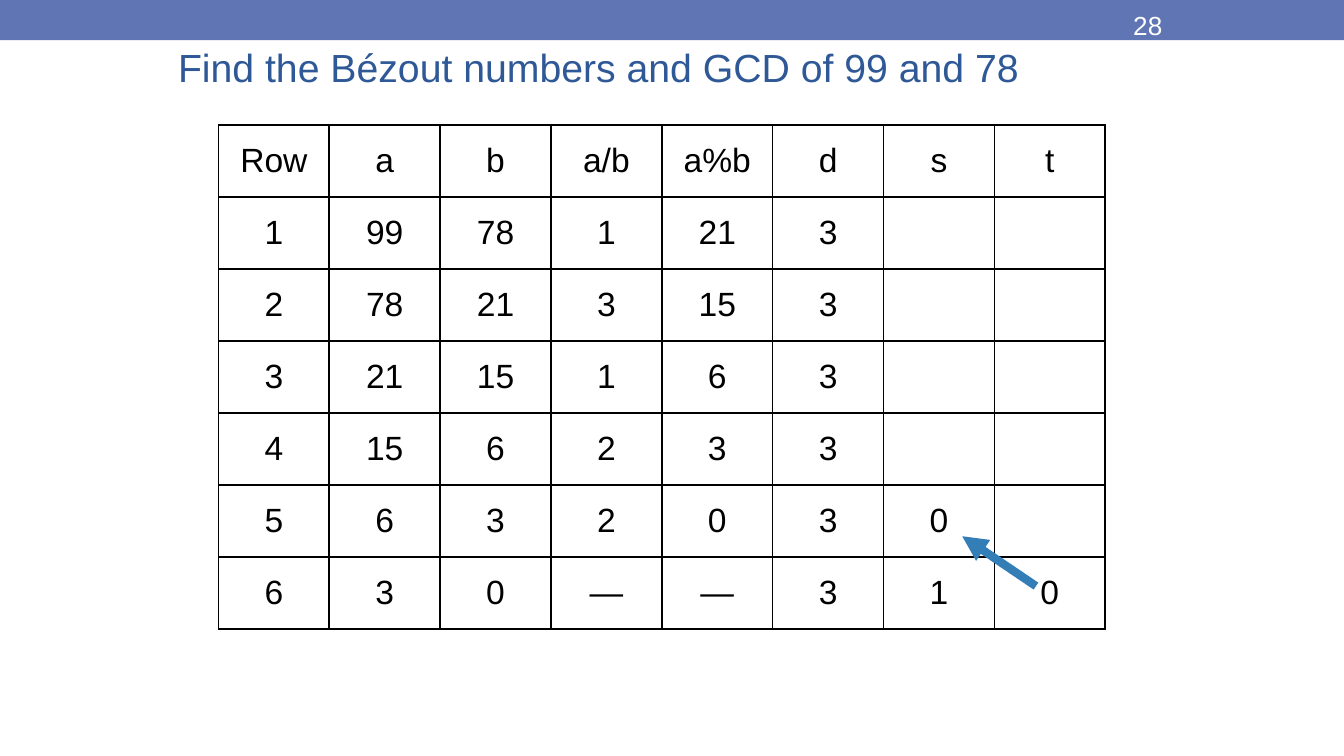
from dataclasses import dataclass

from pptx import Presentation
from pptx import util as u
from pptx.dml.color import RGBColor
from pptx.enum import shapes, text
from pptx.oxml import parse_xml
from pptx.oxml.ns import nsdecls

Pt = u.Pt


@dataclass(frozen=True)
class Theme:
    font: str = "Arial"
    band: str = "6076B4"
    heading: str = "2F5897"
    ink: str = "000000"
    light: str = "FFFFFF"
    arrow: str = "347EB8"
    title_size: float = 21
    table_size: float = 18
    number_size: float = 14


def write(frame, words, *, size, color, font, align=text.PP_ALIGN.LEFT):
    para = frame.paragraphs[0]
    para.alignment = align
    span = para.add_run()
    span.text = words
    span.font.name = font
    span.font.size = Pt(size)
    span.font.color.rgb = RGBColor.from_string(color)


class PageBuilder:
    def __init__(self, page, theme):
        self.page = page
        self.theme = theme

    def band(self, left, top, width, height):
        box = self.page.shapes.add_shape(
            shapes.MSO_SHAPE.RECTANGLE, Pt(left), Pt(top), Pt(width), Pt(height))
        box.shadow.inherit = False
        box.fill.solid()
        box.fill.fore_color.rgb = RGBColor.from_string(self.theme.band)
        box.line.fill.background()

    def label(self, words, left, top, width, height, *, size, color,
              inset, anchor=text.MSO_ANCHOR.TOP):
        """Add a text box; inset is (side, top and bottom)."""
        box = self.page.shapes.add_textbox(Pt(left), Pt(top), Pt(width), Pt(height))
        frame = box.text_frame
        frame.word_wrap = True
        frame.vertical_anchor = anchor
        frame.margin_left = frame.margin_right = Pt(inset[0])
        frame.margin_top = frame.margin_bottom = Pt(inset[1])
        write(frame, words, size=size, color=color, font=self.theme.font)

    def border(self, cell):
        """Draw a thin line on all four sides; call before setting the fill."""
        properties = cell._tc.get_or_add_tcPr()
        for side in ("lnL", "lnR", "lnT", "lnB"):
            properties.append(parse_xml(
                f'<a:{side} {nsdecls("a")} w="{Pt(1)}"><a:solidFill>'
                f'<a:srgbClr val="{self.theme.ink}"/></a:solidFill></a:{side}>'))

    def table(self, rows, left, top, column_width, row_height):
        count = len(rows[0])
        table = self.page.shapes.add_table(
            len(rows), count, Pt(left), Pt(top),
            Pt(column_width * count), Pt(row_height * len(rows))).table
        table.first_row = table.horz_banding = False
        for column in table.columns:
            column.width = Pt(column_width)
        for row, values in zip(table.rows, rows):
            row.height = Pt(row_height)
            for cell, value in zip(row.cells, values):
                self.border(cell)
                cell.fill.background()
                cell.vertical_anchor = text.MSO_ANCHOR.MIDDLE
                cell.margin_left = cell.margin_right = Pt(5.4)
                cell.margin_top = cell.margin_bottom = Pt(2.7)
                if value:
                    write(cell.text_frame, value, size=self.theme.table_size,
                          color=self.theme.ink, font=self.theme.font,
                          align=text.PP_ALIGN.CENTER)

    def arrow(self, start, end, width):
        line = self.page.shapes.add_connector(
            shapes.MSO_CONNECTOR.STRAIGHT, *map(Pt, start + end))
        line.line.width = Pt(width)
        line.line.color.rgb = RGBColor.from_string(self.theme.arrow)
        line.line._get_or_add_ln().append(
            parse_xml(f'<a:tailEnd {nsdecls("a")} type="triangle"/>'))
        line._element.spPr.append(parse_xml(f'<a:effectLst {nsdecls("a")}/>'))


EUCLID_ROWS = [
    ("Row", "a", "b", "a/b", "a%b", "d", "s", "t"),
    ("1", "99", "78", "1", "21", "3", "", ""),
    ("2", "78", "21", "3", "15", "3", "", ""),
    ("3", "21", "15", "1", "6", "3", "", ""),
    ("4", "15", "6", "2", "3", "3", "", ""),
    ("5", "6", "3", "2", "0", "3", "0", ""),
    ("6", "3", "0", "—", "—", "3", "1", "0"),
]


def main():
    deck = Presentation()
    deck.slide_width, deck.slide_height = Pt(720), Pt(405)
    theme = Theme()
    builder = PageBuilder(deck.slides.add_slide(deck.slide_layouts[6]), theme)

    builder.band(0, 0, 720, 21.6)
    builder.label("Find the Bézout numbers and GCD of 99 and 78", 90, 0, 540, 54,
                  size=theme.title_size, color=theme.heading, inset=(5.4, 5.4),
                  anchor=text.MSO_ANCHOR.BOTTOM)
    builder.table(EUCLID_ROWS, left=117, top=67, column_width=59.4, row_height=38.57)
    builder.arrow((555, 314), (515.5, 287.3), width=4.5)
    builder.label("28", 600, 0.7, 84, 19.4, size=theme.number_size,
                  color=theme.light, inset=(7.2, 4.6))
    deck.save("out.pptx")


if __name__ == "__main__":
    main()
